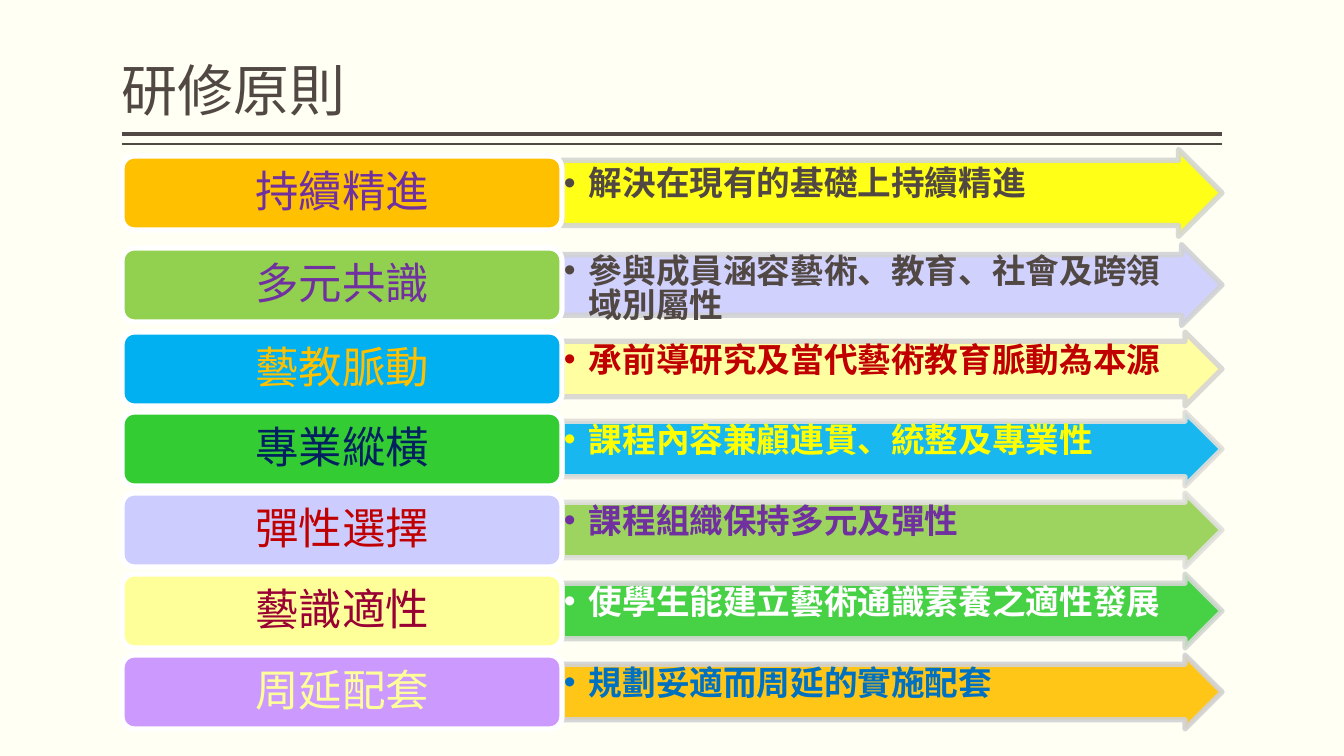
from lxml.etree import SubElement
from pptx import Presentation
from pptx.dml.color import RGBColor
from pptx.enum.shapes import MSO_CONNECTOR, MSO_SHAPE
from pptx.enum.text import MSO_ANCHOR as Anchor, MSO_AUTO_SIZE, PP_ALIGN as Align
from pptx.oxml.ns import qn
from pptx.util import Emu, Pt

FONT = "Noto Sans CJK JP"
CREAM = RGBColor(0xFF, 0xFF, 0xF3)
BROWN = RGBColor(0x51, 0x48, 0x43)
WHITE = RGBColor(0xFF, 0xFF, 0xFF)
AMBER = RGBColor(0xFF, 0xC0, 0x00)
YELLOW = RGBColor(0xFF, 0xFF, 0x00)
PALE_YELLOW = RGBColor(0xFF, 0xFF, 0x99)
LIME = RGBColor(0x92, 0xD0, 0x50)
GREEN = RGBColor(0x33, 0xCC, 0x33)
SKY = RGBColor(0x00, 0xB0, 0xF0)
BLUE = RGBColor(0x00, 0x70, 0xC0)
NAVY = RGBColor(0x00, 0x20, 0x60)
LAVENDER = RGBColor(0xCC, 0xCC, 0xFF)
LILAC = RGBColor(0xCC, 0x99, 0xFF)
PURPLE = RGBColor(0x70, 0x30, 0xA0)
RED = RGBColor(0xC0, 0x00, 0x00)
MAROON = RGBColor(0x99, 0x00, 0x33)
GREY_GREEN = RGBColor(0xD4, 0xD7, 0xD3)
GREY_BLUE = RGBColor(0xD1, 0xD2, 0xD4)
GREY_PINK = RGBColor(0xD8, 0xD5, 0xD3)
GREY_SAND = RGBColor(0xE3, 0xDE, 0xD8)
GREY_LIGHT = RGBColor(0xE1, 0xE0, 0xDF)

LEFT, CONTENT_WIDTH = 122, 1100
PILL_WIDTH, PILL_HEIGHT = 440, 74
OUTLINE = Pt(3.78)

# principle, pill fill, pill text; detail, arrow fill, arrow outline, arrow text
PRINCIPLES = [
    ("持續精進", AMBER, PURPLE,
     "解決在現有的基礎上持續精進", YELLOW, GREY_GREEN, BROWN),
    ("多元共識", LIME, PURPLE,
     "參與成員涵容藝術、教育、社會及跨領域別屬性", LAVENDER, GREY_BLUE, BROWN),
    ("藝教脈動", SKY, AMBER,
     "承前導研究及當代藝術教育脈動為本源", PALE_YELLOW, GREY_PINK, RED),
    ("專業縱橫", GREEN, NAVY,
     "課程內容兼顧連貫、統整及專業性", SKY, GREY_SAND, YELLOW),
    ("彈性選擇", LAVENDER, RED,
     "課程組織保持多元及彈性", LIME, GREY_LIGHT, PURPLE),
    ("藝識適性", PALE_YELLOW, MAROON,
     "使學生能建立藝術通識素養之適性發展", GREEN, GREY_GREEN, WHITE),
    ("周延配套", LILAC, PALE_YELLOW,
     "規劃妥適而周延的實施配套", AMBER, GREY_BLUE, BLUE),
]
# centre, arrow height, detail line spacing; the last five rows are evenly spaced
ROWS = [(193, 87, 1.0), (285, 81, Pt(24))]
ROWS += [(369 + 323 * i // 4, 74, 0.9) for i in range(5)]


def px(length):
    return Emu(round(length * 914400 / 100.8))


def set_all(target, values):
    for name, value in values.items():
        setattr(target, name, value)


def write(shape, text, size, color, frame, paragraph, bold=False):
    """Put one formatted paragraph in the shape and return it."""
    set_all(shape.text_frame, {"word_wrap": True, "auto_size": MSO_AUTO_SIZE.NONE, **frame})
    line = shape.text_frame.paragraphs[0]
    set_all(line, paragraph)
    run = line.add_run()
    run.text = text
    set_all(run.font, {"name": FONT, "size": Pt(size), "bold": bold})
    run.font.color.rgb = color
    SubElement(run._r.get_or_add_rPr(), qn("a:ea"), typeface=FONT)
    return line


def margins(x, y):
    return {"margin_left": px(x), "margin_right": px(x),
            "margin_top": px(y), "margin_bottom": px(y)}


def add_block(slide, preset, box, fill, outline):
    block = slide.shapes.add_shape(preset, *map(px, box))
    block.shadow.inherit = False
    block.fill.solid()
    block.fill.fore_color.rgb = fill
    block.line.color.rgb = outline
    block.line.width = OUTLINE
    return block


def add_heading(slide, left, top, width, height):
    title = slide.shapes.title
    set_all(title, {"left": px(left), "top": px(top),
                    "width": px(width), "height": px(height)})
    write(title, "研修原則", 40, BROWN,
          {"vertical_anchor": Anchor.BOTTOM, **margins(0, 5)},
          {"alignment": Align.LEFT, "line_spacing": 0.9})
    for gap, weight in ((5, 3), (15, 1)):
        y = px(top + height + gap)
        rule = slide.shapes.add_connector(
            MSO_CONNECTOR.STRAIGHT, px(left), y, px(left + width), y)
        rule.line.color.rgb = BROWN
        rule.line.width = Pt(weight)
        SubElement(rule._element.spPr, qn("a:effectLst"))


def add_detail_arrow(slide, box, text, fill, outline, color, spacing):
    arrow = add_block(slide, MSO_SHAPE.RIGHT_ARROW, box, fill, outline)
    arrow.adjustments[0] = 0.75
    for tint in arrow._element.spPr.iter(qn("a:srgbClr")):
        SubElement(tint, qn("a:alpha"), val="90000")
    line = write(arrow, text, 24, color,
                 {"vertical_anchor": Anchor.TOP, **margins(2, 2)},
                 {"alignment": Align.LEFT, "line_spacing": spacing}, bold=True)
    layout = line._p.get_or_add_pPr()
    layout.set("marL", str(px(25)))
    layout.set("indent", str(-px(25)))
    SubElement(layout, qn("a:buFont"), typeface="Arial")
    SubElement(layout, qn("a:buChar"), char="•")


def add_principle(slide, left, centre, width, arrow_height, spacing, principle):
    name, pill_fill, pill_color, detail, fill, outline, color = principle
    arrow_box = (left + PILL_WIDTH, centre - arrow_height / 2,
                 width - PILL_WIDTH, arrow_height)
    add_detail_arrow(slide, arrow_box, detail, fill, outline, color, spacing)
    pill_box = (left, centre - PILL_HEIGHT / 2, PILL_WIDTH, PILL_HEIGHT)
    pill = add_block(slide, MSO_SHAPE.ROUNDED_RECTANGLE, pill_box, pill_fill, WHITE)
    write(pill, name, 31, pill_color,
          {"vertical_anchor": Anchor.MIDDLE, **margins(13, 6)},
          {"alignment": Align.CENTER, "line_spacing": 0.9})


def main():
    deck = Presentation()
    set_all(deck, {"slide_width": px(1344), "slide_height": px(756)})
    slide = deck.slides.add_slide(deck.slide_layouts[5])
    slide.background.fill.solid()
    slide.background.fill.fore_color.rgb = CREAM
    add_heading(slide, LEFT, 8, CONTENT_WIDTH, 121)
    for (centre, arrow_height, spacing), principle in zip(ROWS, PRINCIPLES):
        add_principle(slide, LEFT, centre, CONTENT_WIDTH, arrow_height, spacing, principle)
    deck.save("out.pptx")


if __name__ == "__main__":
    main()
